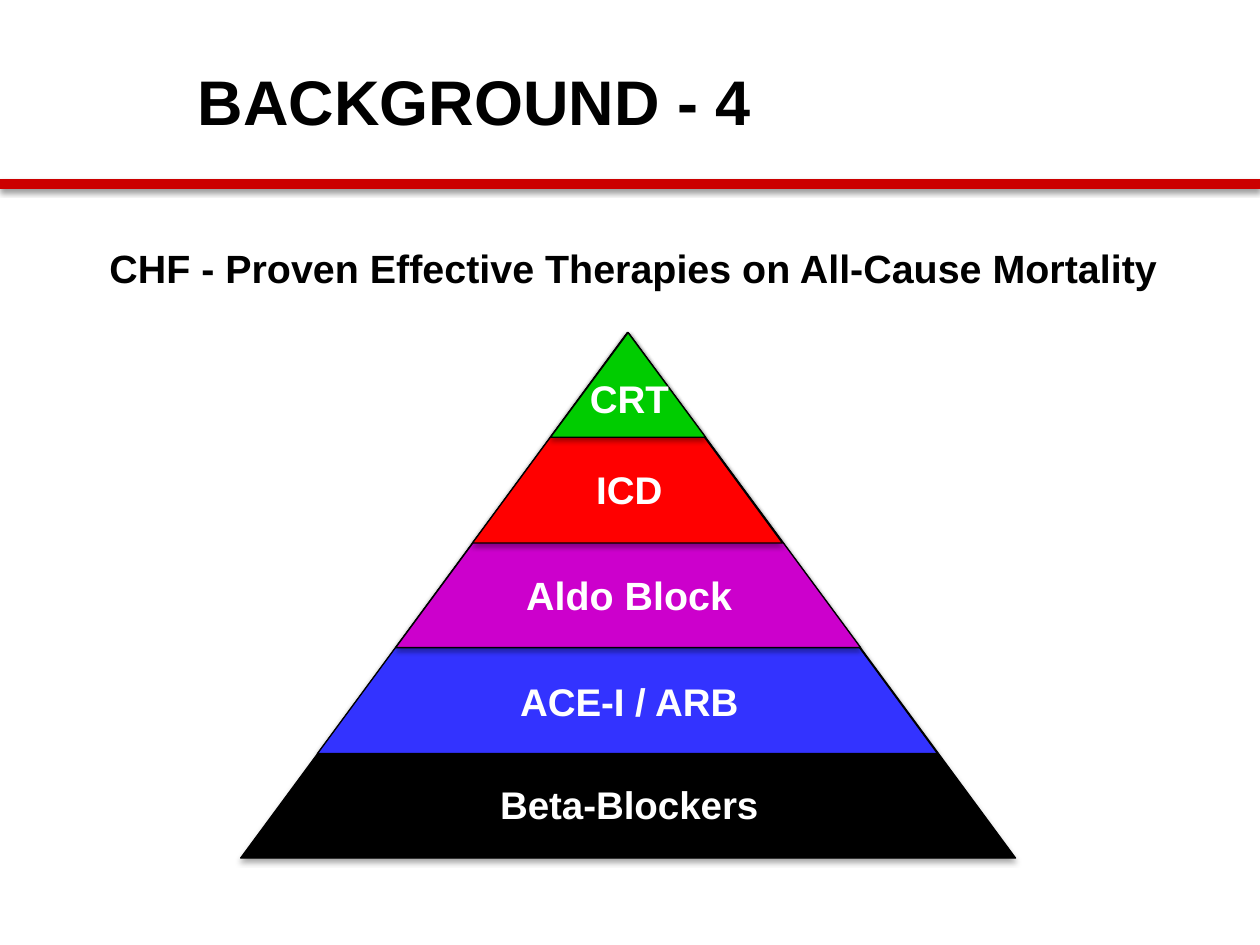
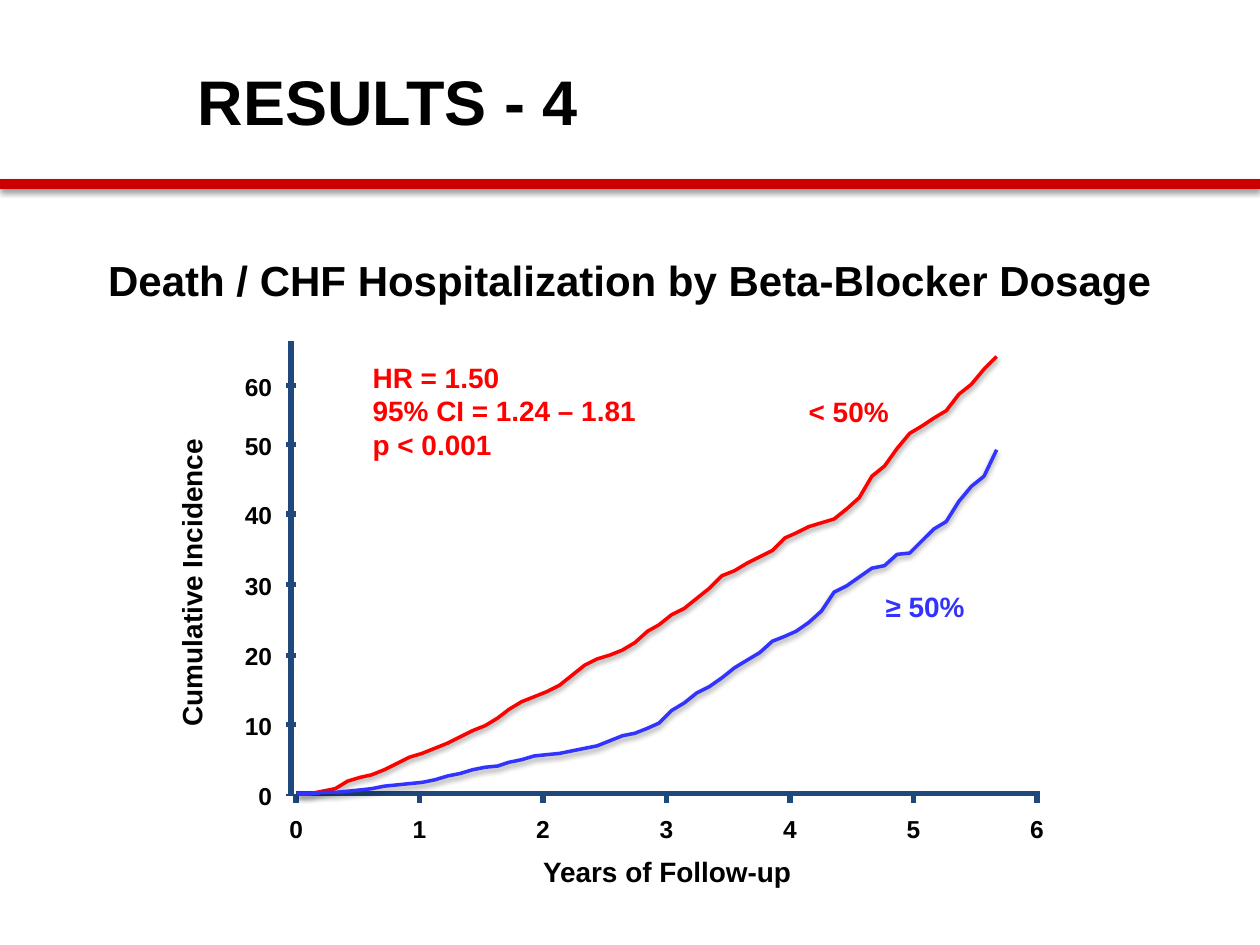
"""Build two heart-failure slides: a therapy pyramid and a cumulative incidence plot."""
from lxml import etree
from pptx import Presentation
from pptx import util as u
from pptx.dml.color import RGBColor
from pptx.enum import shapes, text
from pptx.oxml.ns import qn

FONT = "Arial"
BLACK = RGBColor(0x00, 0x00, 0x00)
WHITE = RGBColor(0xFF, 0xFF, 0xFF)
BAND = RGBColor(0xCC, 0x00, 0x00)
AXIS = RGBColor(0x1F, 0x49, 0x7D)
RED = RGBColor(0xFF, 0x00, 0x00)
BLUE = RGBColor(0x33, 0x33, 0xFF)
PURPLE = RGBColor(0xCC, 0x00, 0xCC)
GREEN = RGBColor(0x00, 0xCC, 0x00)
LEFT, CENTER, RIGHT = text.PP_ALIGN.LEFT, text.PP_ALIGN.CENTER, text.PP_ALIGN.RIGHT
STRAIGHT = shapes.MSO_CONNECTOR.STRAIGHT
MIDDLE = text.MSO_ANCHOR.MIDDLE

prs = Presentation()
prs.slide_width, prs.slide_height = u.Inches(10), u.Inches(7.5)
COLS, ROWS = 1000, 750
COL, ROW = prs.slide_width // COLS, prs.slide_height // ROWS


def add_text(s, x, y, w, h, content, size, color=BLACK, align=LEFT, inset=True):
    sp = s.shapes.add_textbox(x * COL, y * ROW, w * COL, h * ROW)
    tf = sp.text_frame
    tf.word_wrap = True
    if not inset:
        tf.margin_left = tf.margin_right = tf.margin_top = tf.margin_bottom = 0
    tf.text = content
    for p in tf.paragraphs:
        p.alignment = align
        p.font.name, p.font.size, p.font.bold = FONT, u.Pt(size), True
        p.font.color.rgb = color
    return sp


def style_line(sp, color, width, opacity=0, distance=1.6):
    sp.line.color.rgb, sp.line.width = color, u.Pt(width)
    effects = etree.SubElement(sp.element.spPr, qn("a:effectLst"))
    if opacity:
        shadow = etree.SubElement(
            effects, qn("a:outerShdw"), blurRad=str(u.Pt(3.1)),
            dist=str(u.Pt(distance)), dir="5400000", rotWithShape="0")
        rgb = etree.SubElement(shadow, qn("a:srgbClr"), val="000000")
        etree.SubElement(rgb, qn("a:alpha"), val=str(opacity * 1000))


BAND_Y = 146
slides = []
for title in ("BACKGROUND - 4", "RESULTS - 4"):
    s = prs.slides.add_slide(prs.slide_layouts.get_by_name("Title Only"))
    band = s.shapes.add_connector(STRAIGHT, 0, BAND_Y * ROW, COLS * COL, BAND_Y * ROW)
    style_line(band, BAND, 6, opacity=38)
    sp = s.shapes.title
    sp.left, sp.top, sp.width, sp.height = 147 * COL, 17 * ROW, 688 * COL, 125 * ROW
    tf = sp.text_frame
    tf.text = title
    tf.auto_size = text.MSO_AUTO_SIZE.NONE
    tf.vertical_anchor = MIDDLE
    p = tf.paragraphs[0]
    p.alignment = LEFT
    p.font.name, p.font.size, p.font.bold = FONT, u.Pt(36), True
    p.font.color.rgb = BLACK
    slides.append(s)
background, results = slides

s = background
add_text(s, 77, 189, 914, 48, "CHF - Proven Effective Therapies on All-Cause Mortality", 22.5)

APEX_X, APEX_Y, TIER_W, TIER_H = 498, 264, 123, 83.4
tiers = [
    ("CRT", GREEN, 22, 29),
    ("ICD", RED, 22, 18),
    ("Aldo Block", PURPLE, 22.5, 17),
    ("ACE-I / ARB", BLUE, 22, 19),
    ("Beta-Blockers", BLACK, 22, 17),
]
for level in range(len(tiers), 0, -1):
    name, color, size, label_drop = tiers[level - 1]
    width, height = TIER_W * level, round(TIER_H * level)
    sp = s.shapes.add_shape(
        shapes.MSO_SHAPE.ISOSCELES_TRIANGLE, (APEX_X - width // 2) * COL, APEX_Y * ROW,
        width * COL, height * ROW)
    sp.fill.solid()
    sp.fill.fore_color.rgb = color
    style_line(sp, BLACK, 0.75, opacity=35, distance=1.8)
for above, (name, color, size, label_drop) in enumerate(tiers):
    label_y = APEX_Y + round(TIER_H * above) + label_drop
    add_text(s, 383, label_y, 233, 48, name, size, WHITE, CENTER)

s = results
sp = add_text(s, 76, 177, 969, 90, "Death / CHF Hospitalization by Beta-Blocker Dosage", 24)
sp.text_frame.vertical_anchor = MIDDLE

ORIGIN_X, ORIGIN_Y = 235, 630
AXIS_X, AXIS_TOP, AXIS_RIGHT = 231, 271, 825
YEAR_W, TEN_PERCENT_H, SIXTY_PERCENT_Y = 98, 55.7, 306
year_ticks = [ORIGIN_X + YEAR_W * year for year in range(7)]
percent_ticks = [ORIGIN_Y + 1 - round(TEN_PERCENT_H * ten) for ten in range(6)]
percent_ticks.append(SIXTY_PERCENT_Y)

axis_lines = [
    (ORIGIN_X, ORIGIN_Y, AXIS_RIGHT, ORIGIN_Y),
    (AXIS_X, AXIS_TOP, AXIS_X, ORIGIN_Y + 1),
]
axis_lines += [(x, ORIGIN_Y + 7, x, ORIGIN_Y + 1) for x in year_ticks]
axis_lines += [(AXIS_X - 4, y, AXIS_X + 4, y) for y in percent_ticks[1:]]
for x1, y1, x2, y2 in axis_lines:
    line = s.shapes.add_connector(STRAIGHT, x1 * COL, y1 * ROW, x2 * COL, y2 * ROW)
    style_line(line, AXIS, 3)
zero_y = percent_ticks[0] * ROW
zero_tick = s.shapes.add_connector(
    STRAIGHT, (AXIS_X - 4) * COL, zero_y, (AXIS_X + 4) * COL, zero_y)
style_line(zero_tick, AXIS, 1)

for year, x in enumerate(year_ticks):
    add_text(s, x - 20, 646, 40, 24, str(year), 14, align=CENTER, inset=False)
for ten, y in enumerate(percent_ticks):
    add_text(s, 176, y - 11, 40, 24, str(10 * ten), 14, align=RIGHT, inset=False)
sp = add_text(s, 27, 449, 250, 27, "Cumulative Incidence", 16, align=CENTER, inset=False)
sp.rotation = 270
add_text(s, 425, 678, 209, 27, "Years of Follow-up", 16, align=CENTER, inset=False)

add_text(s, 632, 308, 125, 37, "< 50%", 16, RED)
add_text(s, 693, 463, 156, 37, "≥ 50%", 16, BLUE)
add_text(s, 286, 281, 260, 91, "HR = 1.50\n95% CI = 1.24 – 1.81\np < 0.001", 16, RED)

CURVE_X, CURVE_W = 236, 555
low_dose_rise = [
    0, 0, 2, 4, 10, 13, 15, 19, 24, 29, 32, 36, 40, 45, 50, 54, 60, 67, 73, 77,
    81, 86, 94, 102, 107, 110, 114, 120, 129, 134, 142, 147, 155, 163, 173, 177, 183, 188,
    193, 203, 207, 212, 215, 218, 226, 235, 252, 260, 274, 286, 292, 298, 304, 317, 325,
    337, 347,
]
high_dose_rise = [
    0, 0, 1, 1, 2, 3, 4, 6, 7, 8, 9, 11, 14, 16, 19, 21, 22, 25, 27, 30,
    31, 32, 34, 36, 38, 42, 46, 48, 52, 56, 66, 72, 80, 85, 92, 100, 106, 112,
    121, 125, 129, 136, 145, 160, 165, 172, 179, 181, 190, 191, 201, 210, 216, 232, 244,
    252, 273,
]
for rises, color in ((low_dose_rise, RED), (high_dose_rise, BLUE)):
    step = CURVE_W / (len(rises) - 1)
    points = [(CURVE_X + round(step * i), ORIGIN_Y - rise) for i, rise in enumerate(rises)]
    builder = s.shapes.build_freeform(*points[0], scale=COL)
    builder.add_line_segments(points[1:], close=False)
    curve = builder.convert_to_shape()
    curve.fill.background()
    style_line(curve, color, 2, opacity=38)

prs.save("out.pptx")
